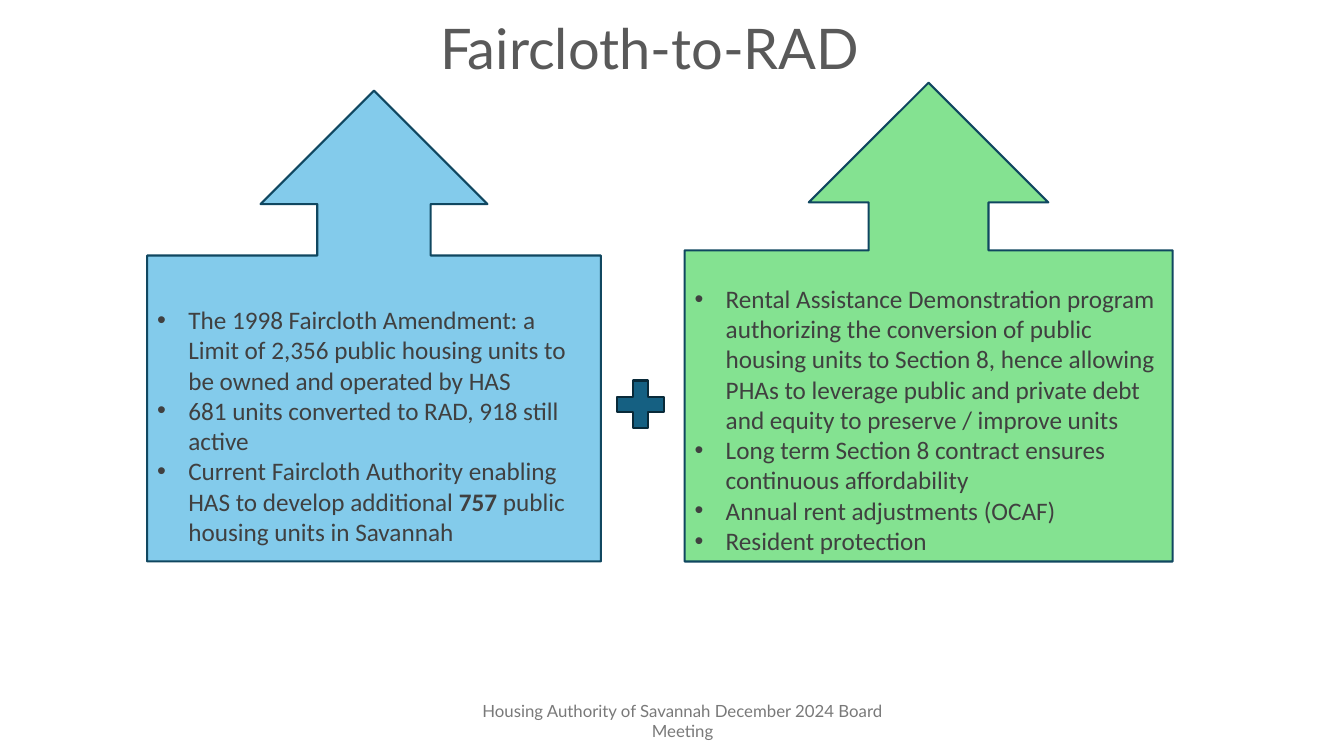
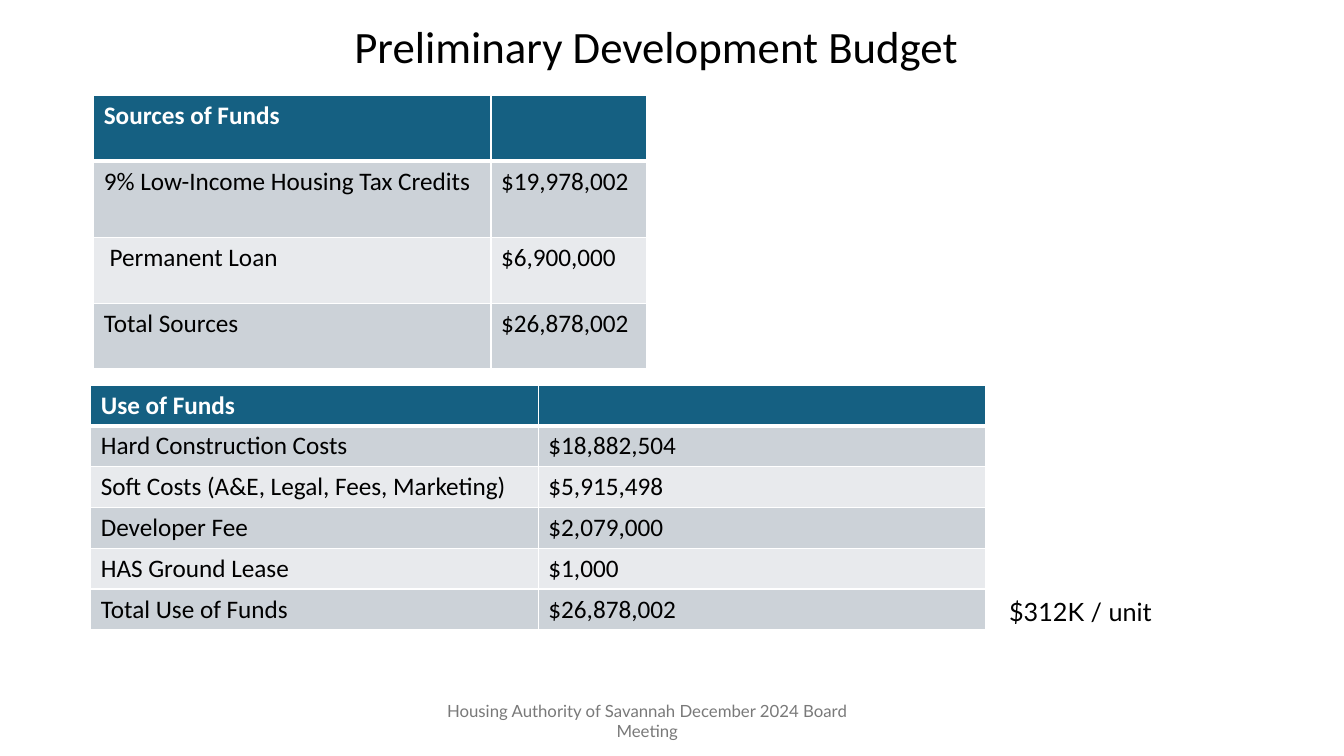
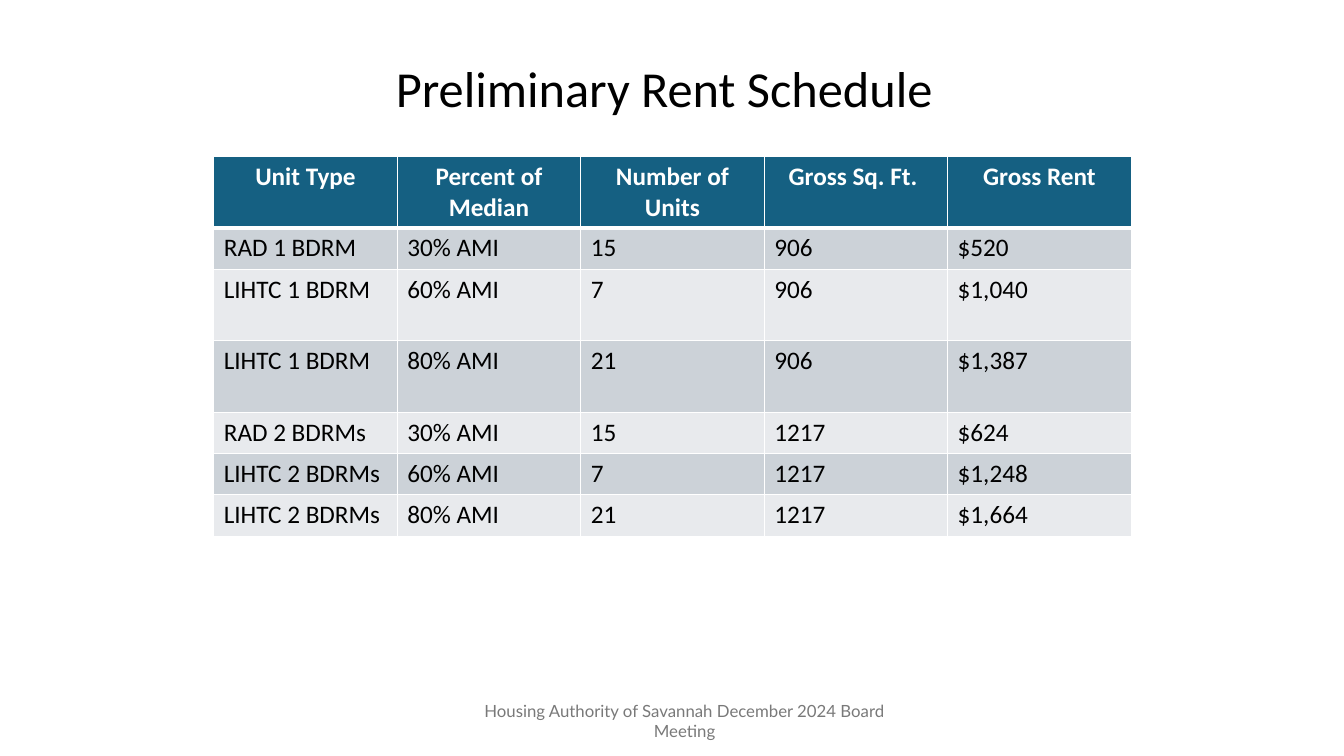
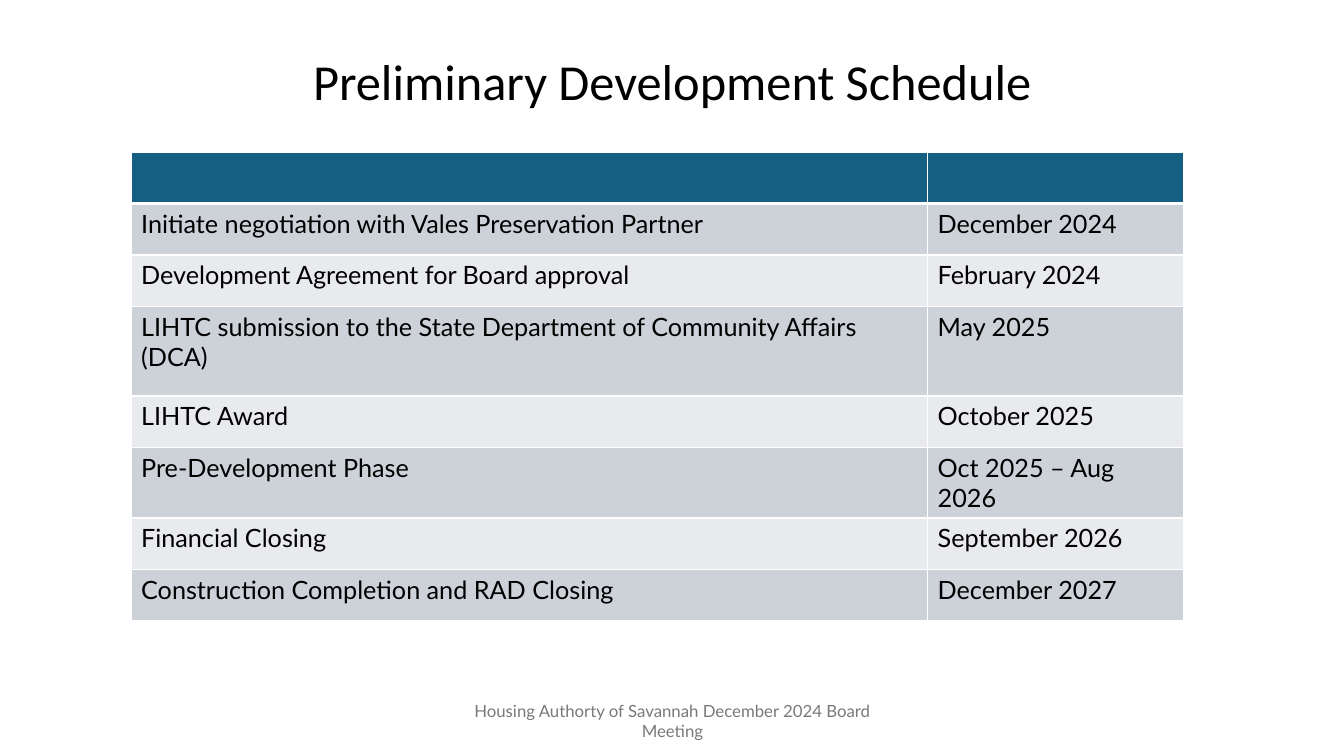
from dataclasses import dataclass

from lxml.etree import SubElement
from pptx import Presentation
from pptx.dml.color import RGBColor
from pptx.enum.shapes import MSO_SHAPE
from pptx.enum.text import MSO_ANCHOR, PP_ALIGN
from pptx.oxml.ns import qn
from pptx.util import Inches, Pt


@dataclass(frozen=True)
class Theme:
    heading_font: str = "Lato"
    body_font: str = "Calibri"
    black: str = "000000"
    white: str = "FFFFFF"
    title_gray: str = "595959"
    body_gray: str = "404040"
    footer_gray: str = "797979"
    teal: str = "156082"
    teal_edge: str = "104760"
    teal_dark: str = "092A39"
    sky: str = "83CBEB"
    green: str = "84E291"
    bands: tuple = ("CCD2D8", "E8EAED")
    title_large: int = 40
    title_medium: int = 36
    title_small: int = 32
    body: int = 18
    footer: int = 12
    outline: float = 1.5
    grid: int = 1
    header_rule: int = 3


THEME = Theme()
FOOTER = "Housing Authority of Savannah December 2024 Board Meeting"


def rgb(color):
    return RGBColor.from_string(color)


def add_bullet(paragraph, indent=0.31):
    properties = paragraph._p.get_or_add_pPr()
    properties.set("marL", str(Inches(indent)))
    properties.set("indent", str(-Inches(indent)))
    SubElement(properties, qn("a:buFont"), typeface="Arial")
    SubElement(properties, qn("a:buChar"), char="•")


def write_text(frame, *paragraphs, size=THEME.body, font=THEME.body_font,
               color=THEME.black, bold=False, align=PP_ALIGN.LEFT,
               anchor=MSO_ANCHOR.TOP, spacing=None, bullets=False):
    frame.word_wrap = True
    frame.vertical_anchor = anchor
    for index, content in enumerate(paragraphs):
        paragraph = frame.add_paragraph() if index else frame.paragraphs[0]
        paragraph.alignment = align
        if spacing:
            paragraph.line_spacing = spacing
        if bullets:
            add_bullet(paragraph)
        for position, words in enumerate(content.split("**")):
            run = paragraph.add_run()
            run.text = words
            run.font.name = font
            run.font.size = Pt(size)
            run.font.bold = bold or position % 2 == 1
            run.font.color.rgb = rgb(color)


def set_borders(cell, color, bottom):
    properties = cell._tc.get_or_add_tcPr()
    widths = {"a:lnL": THEME.grid, "a:lnR": THEME.grid,
              "a:lnT": THEME.grid, "a:lnB": bottom}
    for tag, width in widths.items():
        border = SubElement(properties, qn(tag), w=str(Pt(width)))
        fill = SubElement(border, qn("a:solidFill"))
        SubElement(fill, qn("a:srgbClr"), val=color)


class Deck:
    def __init__(self, theme):
        self.theme = theme
        self.presentation = Presentation()
        self.presentation.slide_width = Inches(13.33)
        self.presentation.slide_height = Inches(7.5)
        self.slide = None

    def new_slide(self, footer_center, footer=FOOTER):
        self.slide = self.presentation.slides.add_slide(
            self.presentation.slide_layouts[6])
        width = 4.5
        self.text((footer_center - width / 2, 6.95, width, 0.4), footer,
                  size=self.theme.footer, font=self.theme.heading_font,
                  color=self.theme.footer_gray, align=PP_ALIGN.CENTER,
                  anchor=MSO_ANCHOR.MIDDLE)

    def text(self, area, *paragraphs, **style):
        box = self.slide.shapes.add_textbox(*map(Inches, area))
        write_text(box.text_frame, *paragraphs, **style)

    def title(self, area, words, **style):
        self.text(area, words, align=PP_ALIGN.CENTER,
                  anchor=MSO_ANCHOR.MIDDLE, spacing=0.9, **style)

    def shape(self, kind, area, fill, line):
        shape = self.slide.shapes.add_shape(kind, *map(Inches, area))
        shape.shadow.inherit = False
        shape.fill.solid()
        shape.fill.fore_color.rgb = rgb(fill)
        shape.line.color.rgb = rgb(line)
        shape.line.width = Pt(self.theme.outline)
        return shape

    def callout(self, area, fill, bottom_inset, *points):
        callout = self.shape(MSO_SHAPE.UP_ARROW_CALLOUT, area, fill,
                             self.theme.teal_edge)
        callout.text_frame.margin_bottom = Inches(bottom_inset)
        write_text(callout.text_frame, *points, color=self.theme.body_gray,
                   anchor=MSO_ANCHOR.BOTTOM, bullets=True)

    def table(self, left, top, columns, heights, rows,
              font=THEME.body_font, header_align=PP_ALIGN.LEFT):
        theme = self.theme
        table = self.slide.shapes.add_table(
            len(rows), len(columns), Inches(left), Inches(top),
            Inches(sum(columns)), Inches(sum(heights))).table
        for column, width in zip(table.columns, columns):
            column.width = Inches(width)
        for index, (row, height, values) in enumerate(
                zip(table.rows, heights, rows)):
            row.height = Inches(height)
            header = index == 0
            fill = theme.teal if header else theme.bands[(index - 1) % 2]
            for cell, value in zip(row.cells, values):
                set_borders(cell, theme.white,
                            theme.header_rule if header else theme.grid)
                cell.fill.solid()
                cell.fill.fore_color.rgb = rgb(fill)
                if value:
                    write_text(cell.text_frame, value, font=font, bold=header,
                               color=theme.white if header else theme.black,
                               align=header_align if header else PP_ALIGN.LEFT)


def faircloth_slide(deck):
    theme = deck.theme
    deck.new_slide(footer_center=6.77)
    deck.callout(
        (1.46, 0.9, 4.5, 4.67), theme.sky, 0.15,
        "The 1998 Faircloth Amendment: a Limit of 2,356 public housing units "
        "to be owned and operated by HAS",
        "681 units converted to RAD, 918 still active",
        "Current Faircloth Authority enabling HAS to develop additional "
        "**757** public housing units in Savannah")
    deck.callout(
        (6.79, 0.82, 4.84, 4.75), theme.green, 0.06,
        "Rental Assistance Demonstration program authorizing the conversion "
        "of public housing units to Section 8, hence allowing PHAs to "
        "leverage public and private debt and equity to preserve / improve "
        "units",
        "Long term Section 8 contract ensures continuous affordability",
        "Annual rent adjustments (OCAF)",
        "Resident protection")
    deck.title((2.46, 0.15, 7.97, 0.72), "Faircloth-to-RAD",
               size=theme.title_large, font=theme.heading_font,
               color=theme.title_gray)
    deck.shape(MSO_SHAPE.MATH_PLUS, (6.04, 3.69, 0.63, 0.64),
               theme.teal, theme.teal_dark)


def budget_slide(deck):
    theme = deck.theme
    deck.new_slide(footer_center=6.42)
    deck.title((0.76, 0.15, 11.5, 0.68), "Preliminary Development Budget",
               size=theme.title_small)
    deck.table(0.93, 0.95, [3.94, 1.54], [0.65, 0.76, 0.65, 0.65], [
        ("Sources of Funds", ""),
        ("9% Low-Income Housing Tax Credits", "$19,978,002"),
        (" Permanent Loan", "$6,900,000"),
        ("Total Sources", "$26,878,002"),
    ])
    uses = [
        ("Use of Funds", ""),
        ("Hard Construction Costs", "$18,882,504"),
        ("Soft Costs (A&E, Legal, Fees, Marketing)", "$5,915,498"),
        ("Developer Fee", "$2,079,000"),
        ("HAS Ground Lease", "$1,000"),
        ("Total Use of Funds", "$26,878,002"),
    ]
    deck.table(0.9, 3.82, [4.44] * 2, [2.43 / len(uses)] * len(uses), uses)
    deck.text((9.91, 5.87, 2.18, 0.4), "$312K / unit",
              font=theme.heading_font)


def rent_slide(deck):
    deck.new_slide(footer_center=6.79)
    deck.title((0.84, 0.4, 11.5, 1.01), "Preliminary Rent Schedule",
               size=deck.theme.title_medium)
    single, double = 0.41, 0.71
    heights = [double, single, double, double, single, single, single]
    deck.table(2.12, 1.55, [1.82] * 5, heights, [
        ("Unit Type", "Percent of Median", "Number of Units",
         "Gross Sq. Ft. ", "Gross Rent"),
        ("RAD 1 BDRM", "30% AMI", "15", "906", "$520"),
        ("LIHTC 1 BDRM", "60% AMI", "7", "906", "$1,040"),
        ("LIHTC 1 BDRM", "80% AMI", "21", "906", "$1,387"),
        ("RAD 2 BDRMs", "30% AMI", "15", "1217", "$624"),
        ("LIHTC 2 BDRMs", "60% AMI", "7", "1217", "$1,248"),
        ("LIHTC 2 BDRMs", "80% AMI", "21", "1217", "$1,664"),
    ], header_align=PP_ALIGN.CENTER)


def schedule_slide(deck):
    theme = deck.theme
    deck.new_slide(
        footer_center=6.67,
        footer="Housing Authorty of Savannah December 2024 Board Meeting")
    deck.title((0.92, 0.37, 11.5, 0.92), "Preliminary Development Schedule",
               size=theme.title_medium)
    heights = [0.51] * 3 + [0.89, 0.51, 0.7] + [0.51] * 2
    deck.table(1.3, 1.51, [7.9, 2.54], heights, [
        ("", ""),
        ("Initiate negotiation with Vales Preservation Partner",
         "December 2024"),
        ("Development Agreement for Board approval", "February 2024"),
        ("LIHTC submission to the State Department of Community Affairs (DCA)",
         "May 2025"),
        ("LIHTC Award", "October 2025"),
        ("Pre-Development Phase", "Oct 2025 – Aug 2026"),
        ("Financial Closing", "September 2026"),
        ("Construction Completion and RAD Closing", "December 2027"),
    ], font=theme.heading_font)


def main():
    deck = Deck(THEME)
    for build in (faircloth_slide, budget_slide, rent_slide, schedule_slide):
        build(deck)
    deck.presentation.save("out.pptx")


if __name__ == "__main__":
    main()
